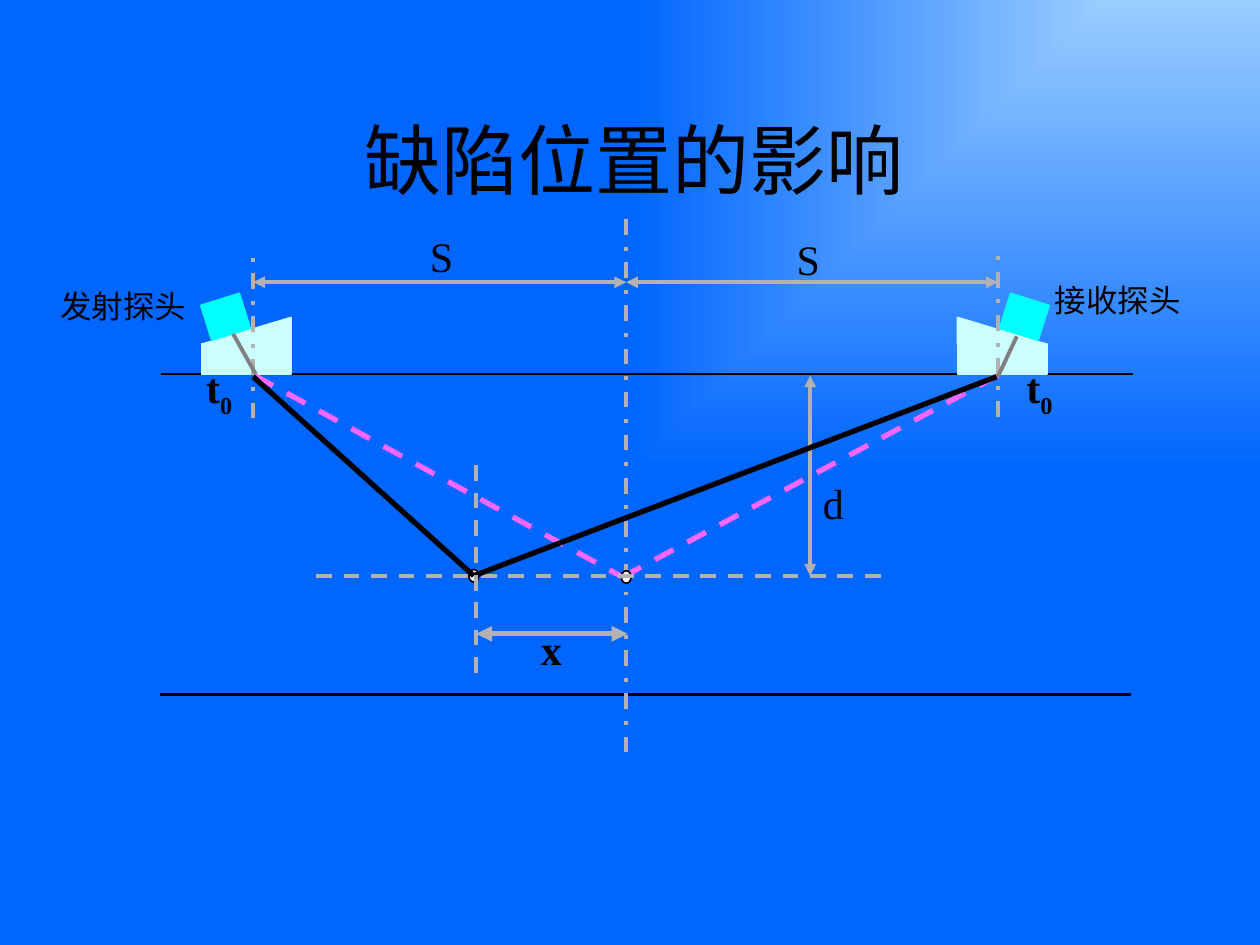
"""Build the slide on how the defect position affects the sound path."""
from lxml import etree
from pptx import Presentation
from pptx import util as u
from pptx.dml.color import RGBColor
from pptx.enum import dml, shapes, text
from pptx.oxml import ns

PX = 9144
COLORS = {
    "sky": "99CCFF", "blue": "0066FF", "black": "000000", "white": "FFFFFF",
    "wedge": "CCFFFF", "crystal": "00FFFF", "pink": "FF66FF",
    "guide": "B2B2B2", "beam": "808080",
}
DASH = dml.MSO_LINE.DASH
DASH_DOT = dml.MSO_LINE.DASH_DOT
RECTANGLE = shapes.MSO_SHAPE.RECTANGLE
TRIANGLE = shapes.MSO_SHAPE.RIGHT_TRIANGLE
OVAL = shapes.MSO_SHAPE.OVAL


class Diagram:
    def __init__(self, slide):
        self.slide = slide
        self.shapes = slide.shapes
        self.font = "Times New Roman"

    def color(self, name):
        return RGBColor.from_string(COLORS[name])

    def start_group(self):
        self.shapes = self.slide.shapes.add_group_shape().shapes

    def background(self, corner, field):
        fill = self.slide.background.fill
        fill.gradient()
        for stop, name, position in zip(fill.gradient_stops, (corner, field), (0, 1)):
            stop.color.rgb = self.color(name)
            stop.position = position
        gradient = self.slide.element.find(".//" + ns.qn("a:gradFill"))
        gradient.remove(gradient.find(ns.qn("a:lin")))
        rectangle = etree.SubElement(gradient, ns.qn("a:path"), path="rect")
        etree.SubElement(rectangle, ns.qn("a:fillToRect"), l="100000", b="100000")

    def shape(self, kind, box, fill, line, rotation=0, flip=False):
        shape = self.shapes.add_shape(kind, *(value * PX for value in box))
        shape.shadow.inherit = False
        shape.fill.solid()
        shape.fill.fore_color.rgb = self.color(fill)
        shape.line.color.rgb = self.color(line)
        shape.line.width = u.Pt(1)
        shape.rotation = rotation
        if flip:
            shape.element.spPr.find(ns.qn("a:xfrm")).set("flipH", "1")

    def line(self, start, end, color, width, dash=None, arrows=False):
        points = (value * PX for value in start + end)
        connector = self.shapes.add_connector(shapes.MSO_CONNECTOR.STRAIGHT, *points)
        connector.line.color.rgb = self.color(color)
        connector.line.width = u.Pt(width)
        if dash:
            connector.line.dash_style = dash
        properties = connector.element.spPr
        if arrows:
            outline = properties.find(ns.qn("a:ln"))
            for tag in ("a:headEnd", "a:tailEnd"):
                etree.SubElement(outline, ns.qn(tag), type="triangle")
        etree.SubElement(properties, ns.qn("a:effectLst"))

    def label(self, box, content, size, bold=False, subscript="", wrap=False):
        shape = self.shapes.add_textbox(*(value * PX for value in box))
        frame = shape.text_frame
        frame.text = content
        frame.word_wrap = wrap
        if not wrap:
            frame.auto_size = text.MSO_AUTO_SIZE.SHAPE_TO_FIT_TEXT
        frame.vertical_anchor = text.MSO_ANCHOR.MIDDLE
        paragraph = frame.paragraphs[0]
        paragraph.alignment = text.PP_ALIGN.CENTER
        if subscript:
            run = paragraph.add_run()
            run.text = subscript
            run.font._element.set("baseline", "-25000")
        for run in paragraph.runs:
            run.font.name = self.font
            run.font.size = u.Pt(size)
            run.font.bold = bold
            run.font.color.rgb = self.color("black")

    def probe(self, left, crystal_left, tilt, facing_right):
        self.shape(RECTANGLE, (left, 273, 71, 24), "wedge", "wedge")
        triangle_left = left + 1 if facing_right else left
        self.shape(TRIANGLE, (triangle_left, 252, 70, 21), "wedge", "wedge", flip=facing_right)
        self.shape(RECTANGLE, (crystal_left, 237, 32, 29), "crystal", "crystal", tilt)

    def defect(self, left, top):
        self.shape(OVAL, (left, top, 8, 10), "white", "black")


def main():
    presentation = Presentation()
    presentation.slide_width = 1000 * PX
    presentation.slide_height = 750 * PX
    diagram = Diagram(presentation.slides.add_slide(presentation.slide_layouts[6]))
    diagram.background("sky", "blue")
    diagram.label((142, 75, 723, 102), "缺陷位置的影响", 44, wrap=True)

    emitter, axis, receiver = 201, 497, 792
    diagram.line((128, 297), (899, 297), "black", 1.5)
    diagram.line((127, 551), (898, 551), "black", 1.5)
    diagram.probe(160, 163, -17.4, True)
    diagram.probe(760, 797, 17.4, False)
    diagram.label((38, 223, 120, 40), "发射探头", 18)
    diagram.label((827, 218, 120, 40), "接收探头", 18)

    diagram.line((202, 298), (494, 458), "pink", 3, DASH)
    diagram.line((494, 458), (receiver, 298), "pink", 3, DASH)
    diagram.line((axis, 597), (axis, 170), "guide", 2.25, DASH_DOT)
    diagram.defect(493, 453)
    diagram.line((emitter, 332), (emitter, 201), "guide", 2.25, DASH_DOT)
    diagram.line((receiver, 331), (receiver, 200), "guide", 2.25, DASH_DOT)

    diagram.line((emitter, 224), (axis, 224), "guide", 2.25, arrows=True)
    diagram.line((axis, 224), (receiver, 224), "guide", 2.25, arrows=True)
    diagram.label((331, 178, 39, 50), "S", 24)
    diagram.label((622, 180, 39, 50), "S", 24)
    diagram.line((251, 457), (701, 457), "guide", 2.25, DASH)
    diagram.line((643, 298), (643, 457), "guide", 2.25, arrows=True)
    diagram.label((643, 374, 37, 50), "d", 24)
    for left in (153, 804):
        diagram.label((left, 285, 42, 50), "t", 24, bold=True, subscript="0")
    diagram.line((185, 265), (203, 297), "beam", 2.25)
    diagram.line((807, 267), (receiver, 299), "beam", 2.25)

    diagram.start_group()
    diagram.defect(372, 452)
    diagram.line((emitter, 299), (376, 457), "black", 3)
    diagram.line((376, 457), (791, 299), "black", 3)
    diagram.line((378, 534), (378, 362), "guide", 2.25, DASH)
    diagram.line((378, 503), (498, 503), "guide", 3, arrows=True)
    diagram.label((419, 490, 37, 50), "x", 24, bold=True)
    presentation.save("out.pptx")


if __name__ == "__main__":
    main()
